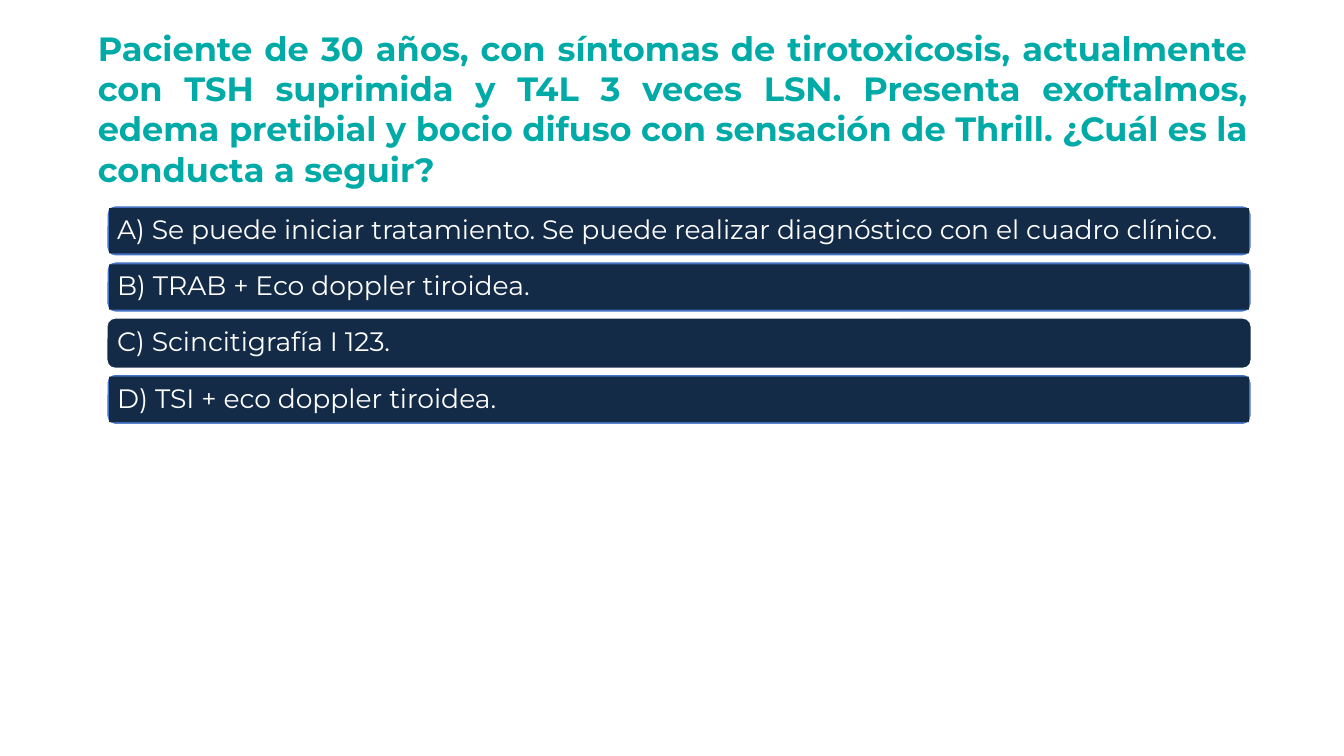
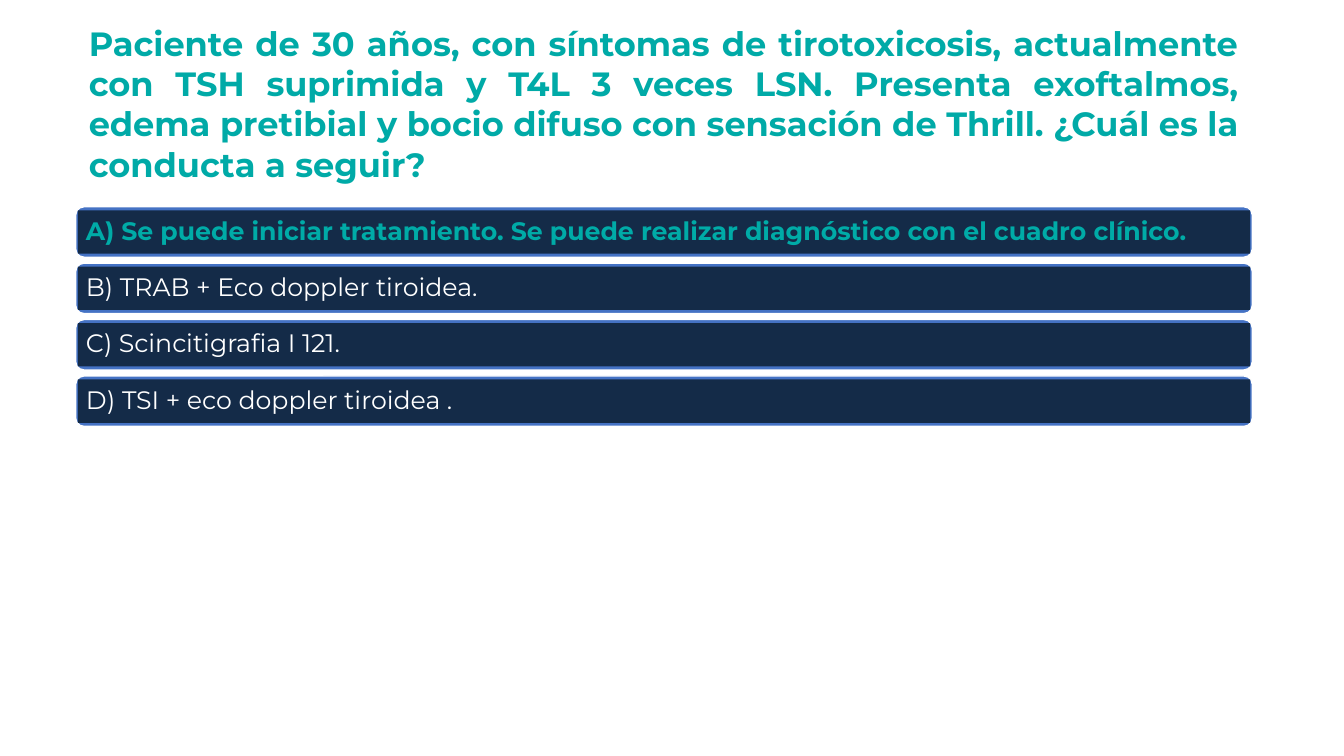
from pptx import Presentation
from pptx.dml.color import RGBColor
from pptx.enum.shapes import MSO_SHAPE as Shape
from pptx.enum.text import MSO_ANCHOR as Anchor, PP_ALIGN as Align
from pptx.util import Inches, Pt

# Shared style
FONT = "Montserrat"
TEAL, BRIGHT_TEAL = "00AAA7", "00ABA7"
NAVY, BLUE, WHITE = "142B48", "4472C4", "FFFFFF"
QUESTION_SIZE = (86.27, 19.33)
FRAME_HEIGHT, SIDE_GAP = 6.67, 0.17

# Content
QUESTION = (
    "Paciente de 30 años, con síntomas de tirotoxicosis, actualmente con TSH "
    "suprimida y T4L 3 veces LSN. Presenta exoftalmos, edema pretibial y bocio "
    "difuso con sensación de Thrill. ¿Cuál es la conducta a seguir?"
)
TREAT = ("A) Se puede iniciar tratamiento. "
         "Se puede realizar diagnóstico con el cuadro clínico.")
ANTIBODIES = "B) TRAB + Eco doppler tiroidea."


def color(code):
    return RGBColor.from_string(code)


class Quiz:
    """Draws on the current slide; lengths are percentages of its size."""

    def __init__(self):
        self.deck = Presentation()
        self.deck.slide_width = Inches(13.33)
        self.deck.slide_height = Inches(7.5)
        self.slide = None

    def new_slide(self):
        self.slide = self.deck.slides.add_slide(self.deck.slide_layouts[6])

    def box(self, left, top, width, height):
        across, down = self.deck.slide_width / 100, self.deck.slide_height / 100
        return (round(left * across), round(top * down),
                round(width * across), round(height * down))

    def panel(self, preset, box, fill, line=None):
        panel = self.slide.shapes.add_shape(preset, *self.box(*box))
        panel.shadow.inherit = False
        panel.fill.solid()
        panel.fill.fore_color.rgb = color(fill)
        if line:
            panel.line.color.rgb = color(line)
            panel.line.width = Pt(1)
        else:
            panel.line.fill.background()
        return panel

    def put_text(self, holder, text, ink, size, inset, bold=False,
                 align=Align.LEFT, spacing=1.0):
        frame = holder.text_frame
        margins = {f"margin_{side}": Inches(inset)
                   for side in ("left", "top", "right", "bottom")}
        paragraph = frame.paragraphs[0]
        run = paragraph.add_run()
        run.text = text
        formats = (
            (frame, {"word_wrap": True, "vertical_anchor": Anchor.MIDDLE, **margins}),
            (paragraph, {"alignment": align, "line_spacing": spacing}),
            (run.font, {"name": FONT, "size": Pt(size), "bold": bold}),
        )
        for target, values in formats:
            for name, value in values.items():
                setattr(target, name, value)
        run.font.color.rgb = color(ink)

    def question(self, left, top):
        title = self.slide.shapes.add_textbox(*self.box(left, top, *QUESTION_SIZE))
        self.put_text(title, QUESTION, TEAL, 24, 0.05, bold=True,
                      align=Align.JUSTIFY)

    def answer(self, text, left, top, width, height, size, plain, correct):
        # A plain answer has a navy frame and no bar of its own
        self.panel(Shape.ROUNDED_RECTANGLE, (left, top, width, FRAME_HEIGHT),
                   NAVY if plain else BLUE, WHITE)
        bar = (left + SIDE_GAP, top + (FRAME_HEIGHT - height) / 2,
               width - 2 * SIDE_GAP, height)
        if plain:
            label = self.slide.shapes.add_textbox(*self.box(*bar))
        else:
            label = self.panel(Shape.RECTANGLE, bar, NAVY)
        self.put_text(label, text, BRIGHT_TEAL if correct else WHITE, size, 0.08,
                      bold=correct, spacing=0.9)

    def answers(self, texts, left, top, width, pitch, height, size,
                plain=None, correct=None):
        for row, text in enumerate(texts):
            self.answer(text, left, top + row * pitch, width, height, size,
                        row == plain, row == correct)


def main():
    quiz = Quiz()

    # Question
    quiz.new_slide()
    quiz.question(6.9, 4.67)
    quiz.answers(
        [TREAT, ANTIBODIES, "C) Scincitigrafía I 123.",
         "D) TSI + eco doppler tiroidea."],
        left=7.95, top=27.2, width=85.15, pitch=7.43, height=6, size=19, plain=2)

    # Question with the correct answer marked
    quiz.new_slide()
    quiz.question(6.23, 4)
    quiz.answers(
        [TREAT, ANTIBODIES, "C) Scincitigrafia I 121.",
         "D) TSI + eco doppler tiroidea ."],
        left=5.63, top=27.35, width=87.55, pitch=7.46, height=5.73, size=18,
        correct=0)

    quiz.deck.save("out.pptx")


if __name__ == "__main__":
    main()
